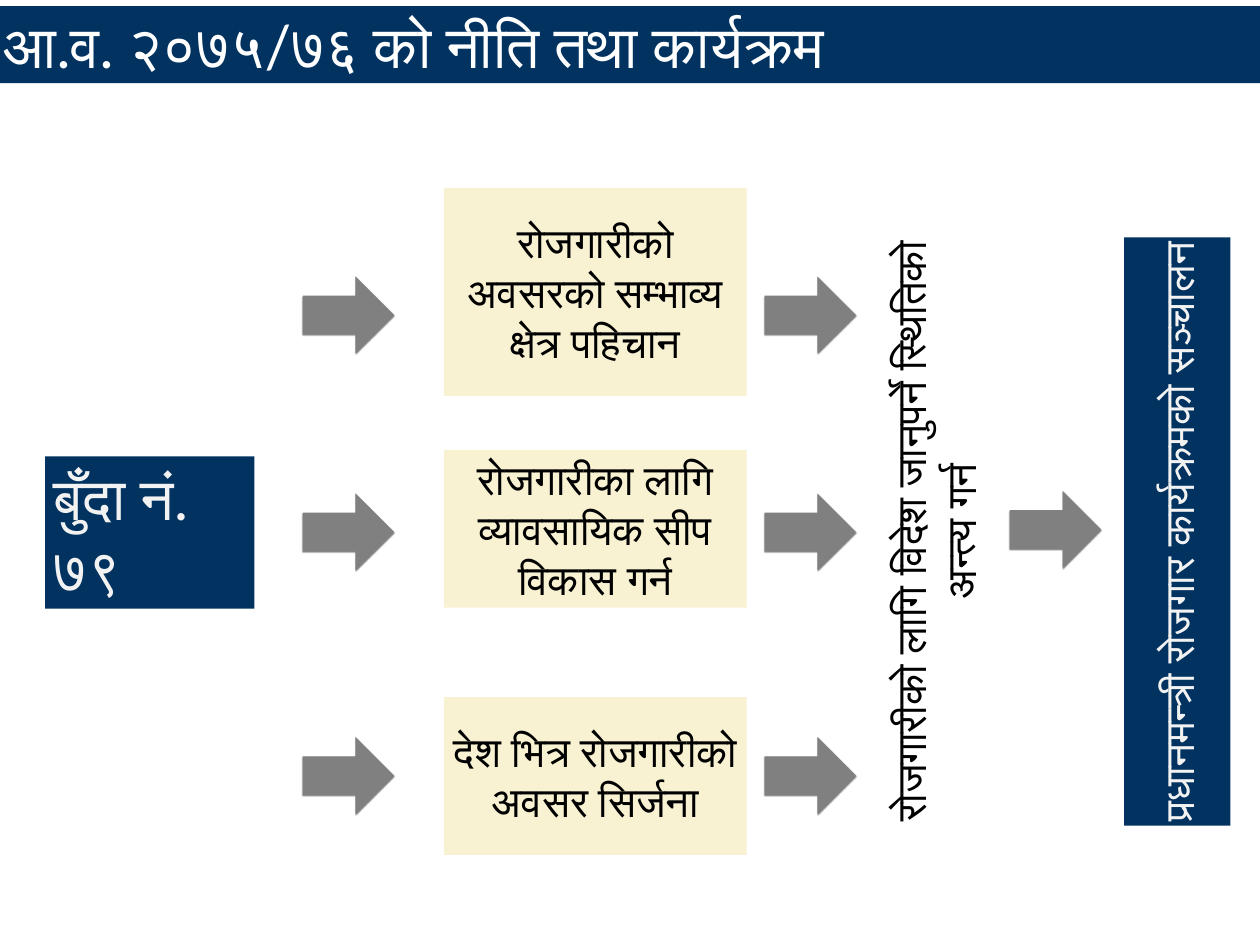
"""Build the policy and programme slide on employment."""
import dataclasses

import lxml.etree
import pptx
import pptx.dml.color
import pptx.enum.shapes
import pptx.enum.text
import pptx.oxml.ns
import pptx.util

Pt = pptx.util.Pt
Shapes = pptx.enum.shapes.MSO_SHAPE
Align = pptx.enum.text.PP_ALIGN


@dataclasses.dataclass(frozen=True)
class Theme:
    """Colours, fonts and type sizes of the slide."""
    navy: str = "013260"
    cream: str = "F8F2D3"
    grey: str = "808080"
    white: str = "FFFFFF"
    pale: str = "F2F2F2"
    black: str = "000000"
    font: str = "Lato"
    accent_font: str = "Roboto"
    large: float = 48
    medium: float = 34
    inset: float = 2.16


THEME = Theme()


def colour(code):
    """Return the colour for a hexadecimal code."""
    return pptx.dml.color.RGBColor.from_string(code)


def paint(shape, fill):
    """Give a shape a solid fill without outline."""
    shape.fill.solid()
    shape.fill.fore_color.rgb = colour(fill)
    shape.line.fill.background()


def write(shape, text, *, size=THEME.medium, ink=THEME.black, font=THEME.font,
          align=Align.CENTER, inset=THEME.inset, before=None):
    """Write one formatted paragraph into a shape."""
    frame = shape.text_frame
    frame.word_wrap = True
    frame.auto_size = pptx.enum.text.MSO_AUTO_SIZE.SHAPE_TO_FIT_TEXT
    frame.vertical_anchor = pptx.enum.text.MSO_ANCHOR.MIDDLE
    if inset is not None:
        frame.margin_left = frame.margin_right = Pt(inset)
        frame.margin_top = frame.margin_bottom = Pt(inset)
    para = frame.paragraphs[0]
    para.alignment = align
    if before is not None:
        para.space_before = Pt(before)
    span = para.add_run()
    span.text = text
    span.font.size = Pt(size)
    span.font.name = font
    span.font.color.rgb = colour(ink)


def add_panel(page, box, fill, kind=Shapes.RECTANGLE):
    """Add a flat filled shape in the given box."""
    shape = page.shapes.add_shape(kind, *map(Pt, box))
    shape.shadow.inherit = False
    paint(shape, fill)
    return shape


def add_arrow(page, left, top):
    """Add a grey block arrow with a thin soft shadow."""
    arrow = add_panel(page, (left, top, 74, 62.6), THEME.grey, Shapes.RIGHT_ARROW)
    name = pptx.oxml.ns.qn
    effects = arrow._element.spPr.find(name("a:effectLst"))
    shadow = lxml.etree.SubElement(
        effects, name("a:outerShdw"), blurRad=str(Pt(1)), dist=str(Pt(1)),
        dir="5400000", rotWithShape="0")
    black = lxml.etree.SubElement(shadow, name("a:srgbClr"), val=THEME.black)
    lxml.etree.SubElement(black, name("a:alpha"), val="50000")


def upright(box):
    """Return the unrotated frame that fills a box after a quarter turn."""
    left, top, width, height = box
    shift = (height - width) / 2
    return left - shift, top + shift, height, width


def build_title(page, box):
    """Place the title band."""
    title = page.shapes.title
    title.left, title.top, title.width, title.height = map(Pt, box)
    paint(title, THEME.navy)
    write(title, "आ.व. २०७५/७६ को नीति तथा कार्यक्रम", size=THEME.large,
          ink=THEME.white, align=Align.LEFT, before=41)


def build_point(page, box):
    """Place the panel with the point number."""
    panel = add_panel(page, box, THEME.navy)
    write(panel, "बुँदा नं. ७९", size=THEME.large, ink=THEME.pale,
          align=Align.LEFT, inset=None)


def build_steps(page, box):
    """Place the three steps, each between two arrows."""
    left, top, width, height = box
    steps = (
        ("रोजगारीको अवसरको सम्भाव्य क्षेत्र पहिचान", 0, 169.2, 72),
        ("रोजगारीका लागि व्यावसायिक सीप विकास गर्न", 213.1, 128.2, 248.4),
        ("देश भित्र रोजगारीको अवसर सिर्जना", height - 128.2, 128.2, 446.4),
    )
    for text, offset, tall, arrow_offset in steps:
        panel = add_panel(page, (left + 114.5, top + offset, 246.2, tall), THEME.cream)
        write(panel, text)
        for arrow_left in (left, left + width - 74):
            add_arrow(page, arrow_left, top + arrow_offset)


def build_goal(page, box):
    """Place the upright goal text."""
    goal = page.shapes.add_textbox(*map(Pt, upright(box)))
    goal.rotation = 270
    write(goal, "रोजगारीको लागि विदेश जानुपर्ने स्थितिको अन्त्य गर्न")


def build_programme(page, box):
    """Place the upright programme bar and the arrow leading to it."""
    left, top, width, height = box
    add_arrow(page, left - 92.8, top + 206)
    bar = add_panel(page, upright(box), THEME.navy)
    bar.rotation = 270
    write(bar, "प्रधानमन्त्री रोजगार कार्यक्रमको सञ्चालन", ink=THEME.pale,
          font=THEME.accent_font)


def main():
    """Build the slide and save the deck."""
    deck = pptx.Presentation()
    deck.slide_width, deck.slide_height = Pt(1024), Pt(768)
    page = deck.slides.add_slide(deck.slide_layouts[5])
    build_title(page, (0, 5, 1024, 62.6))
    build_point(page, (36.7, 370.8, 170, 123.8))
    build_steps(page, (246.2, 152.6, 449.3, 542.2))
    build_goal(page, (716.4, 193, 86.4, 478))
    build_programme(page, (913.6, 193, 86.4, 478))
    deck.save("out.pptx")


if __name__ == "__main__":
    main()
